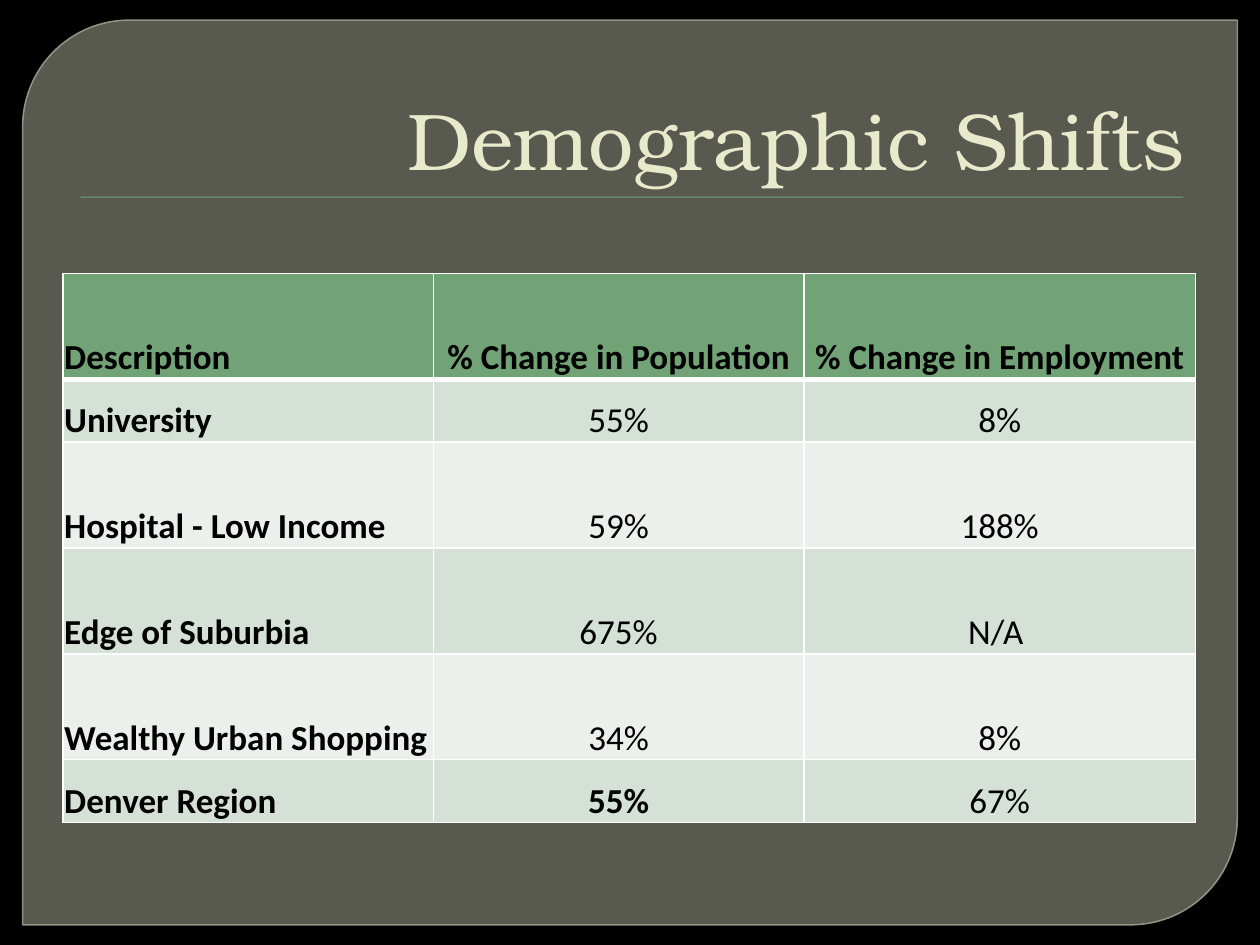
from dataclasses import dataclass

from lxml import etree
from pptx import Presentation
from pptx.dml.color import RGBColor
from pptx.enum.shapes import MSO_SHAPE
from pptx.enum.text import MSO_ANCHOR, PP_ALIGN
from pptx.oxml.ns import qn
from pptx.util import Inches, Pt

PANEL_SHAPE = MSO_SHAPE.ROUND_2_DIAG_RECTANGLE
RECTANGLE = MSO_SHAPE.RECTANGLE
BOTTOM = MSO_ANCHOR.BOTTOM
LEFT, CENTER, RIGHT = PP_ALIGN.LEFT, PP_ALIGN.CENTER, PP_ALIGN.RIGHT


@dataclass(frozen=True)
class Theme:
    background: str = "000000"
    panel: str = "888B7B"
    panel_line: str = "9DA090"
    accent: str = "72A376"
    title: str = "E7EACB"
    text: str = "000000"
    border: str = "FFFFFF"
    bands: tuple = ("D5E0D6", "EBF0EC")
    title_font: str = "TeX Gyre Bonum"
    table_font: str = "Calibri"
    title_size: int = 46
    table_size: int = 20


THEME = Theme()
COLUMN_WIDTHS = (2.94, 2.94, 3.11)
ROW_HEIGHTS = (0.84, 0.5, 0.84, 0.84, 0.84, 0.5)
ROWS = (
    ("Description", "% Change in Population", "% Change in Employment"),
    ("University", "55%", "8%"),
    ("Hospital - Low Income", "59%", "188%"),
    ("Edge of Suburbia", "675%", "N/A "),
    ("Wealthy Urban Shopping", "34%", "8%"),
    ("Denver Region", "55%", "67%"),
)
BOLD_VALUES = {(5, 1)}


def set_fill(fill, color):
    fill.solid()
    fill.fore_color.rgb = RGBColor.from_string(color)


def set_alpha(fill_parent, percent):
    color = fill_parent.find(qn("a:solidFill"))[0]
    etree.SubElement(color, qn("a:alpha"), val=str(percent * 1000))


def add_run(paragraph, text, font, size, color, bold=False):
    run = paragraph.add_run()
    run.text = text
    run.font.name = font
    run.font.size = Pt(size)
    run.font.bold = bold
    run.font.color.rgb = RGBColor.from_string(color)


def add_block(slide, kind, left, top, width, height, color):
    shape = slide.shapes.add_shape(
        kind, Inches(left), Inches(top), Inches(width), Inches(height))
    shape.shadow.inherit = False
    set_fill(shape.fill, color)
    shape.line.fill.background()
    return shape


def add_panel(slide):
    panel = add_block(slide, PANEL_SHAPE, 0.18, 0.16, 9.64, 7.18, THEME.panel)
    panel.adjustments[0] = 0.118
    panel.adjustments[1] = 0
    set_fill(panel.line.fill, THEME.panel_line)
    panel.line.width = Pt(0.87)
    properties = panel._element.spPr
    set_alpha(properties, 65)
    set_alpha(properties.find(qn("a:ln")), 88)


def add_title(slide, text):
    box = slide.shapes.add_textbox(
        Inches(0.5), Inches(0.28), Inches(9), Inches(1.25))
    frame = box.text_frame
    frame.word_wrap = True
    frame.vertical_anchor = BOTTOM
    paragraph = frame.paragraphs[0]
    paragraph.alignment = RIGHT
    add_run(paragraph, text, THEME.title_font, THEME.title_size, THEME.title)


def set_borders(cell, top, bottom):
    properties = cell._tc.get_or_add_tcPr()
    widths = {"a:lnL": 1, "a:lnR": 1, "a:lnT": top, "a:lnB": bottom}
    # Borders must come before the fill in the cell properties
    for position, (tag, width) in enumerate(widths.items()):
        line = etree.Element(qn(tag), w=str(Pt(width)))
        fill = etree.SubElement(line, qn("a:solidFill"))
        etree.SubElement(fill, qn("a:srgbClr"), val=THEME.border)
        properties.insert(position, line)


def fill_cell(cell, text, row, column):
    is_header = row == 0
    set_fill(cell.fill, THEME.accent if is_header else THEME.bands[(row - 1) % 2])
    set_borders(cell, top=3 if row == 1 else 1, bottom=3 if is_header else 1)
    cell.vertical_anchor = BOTTOM
    cell.margin_left = cell.margin_right = cell.margin_top = Inches(0.01)
    cell.margin_bottom = 0
    paragraph = cell.text_frame.paragraphs[0]
    paragraph.alignment = LEFT if column == 0 else CENTER
    bold = is_header or column == 0 or (row, column) in BOLD_VALUES
    add_run(paragraph, text, THEME.table_font, THEME.table_size, THEME.text, bold)


def add_data_table(slide):
    table = slide.shapes.add_table(
        len(ROWS), len(COLUMN_WIDTHS), Inches(0.5), Inches(2.17),
        Inches(sum(COLUMN_WIDTHS)), Inches(sum(ROW_HEIGHTS))).table
    for column, width in zip(table.columns, COLUMN_WIDTHS):
        column.width = Inches(width)
    for row, height in zip(table.rows, ROW_HEIGHTS):
        row.height = Inches(height)
    for row, texts in enumerate(ROWS):
        for column, text in enumerate(texts):
            fill_cell(table.cell(row, column), text, row, column)


def main():
    presentation = Presentation()
    presentation.slide_width = Inches(10)
    presentation.slide_height = Inches(7.5)
    slide = presentation.slides.add_slide(presentation.slide_layouts[6])

    # Backdrop
    set_fill(slide.background.fill, THEME.background)
    add_panel(slide)

    # Heading with its rule
    add_block(slide, RECTANGLE, 0.64, 1.56, 8.75, 0.01, THEME.accent)
    add_title(slide, "Demographic Shifts")

    # Population and employment changes
    add_data_table(slide)
    presentation.save("out.pptx")


if __name__ == "__main__":
    main()
